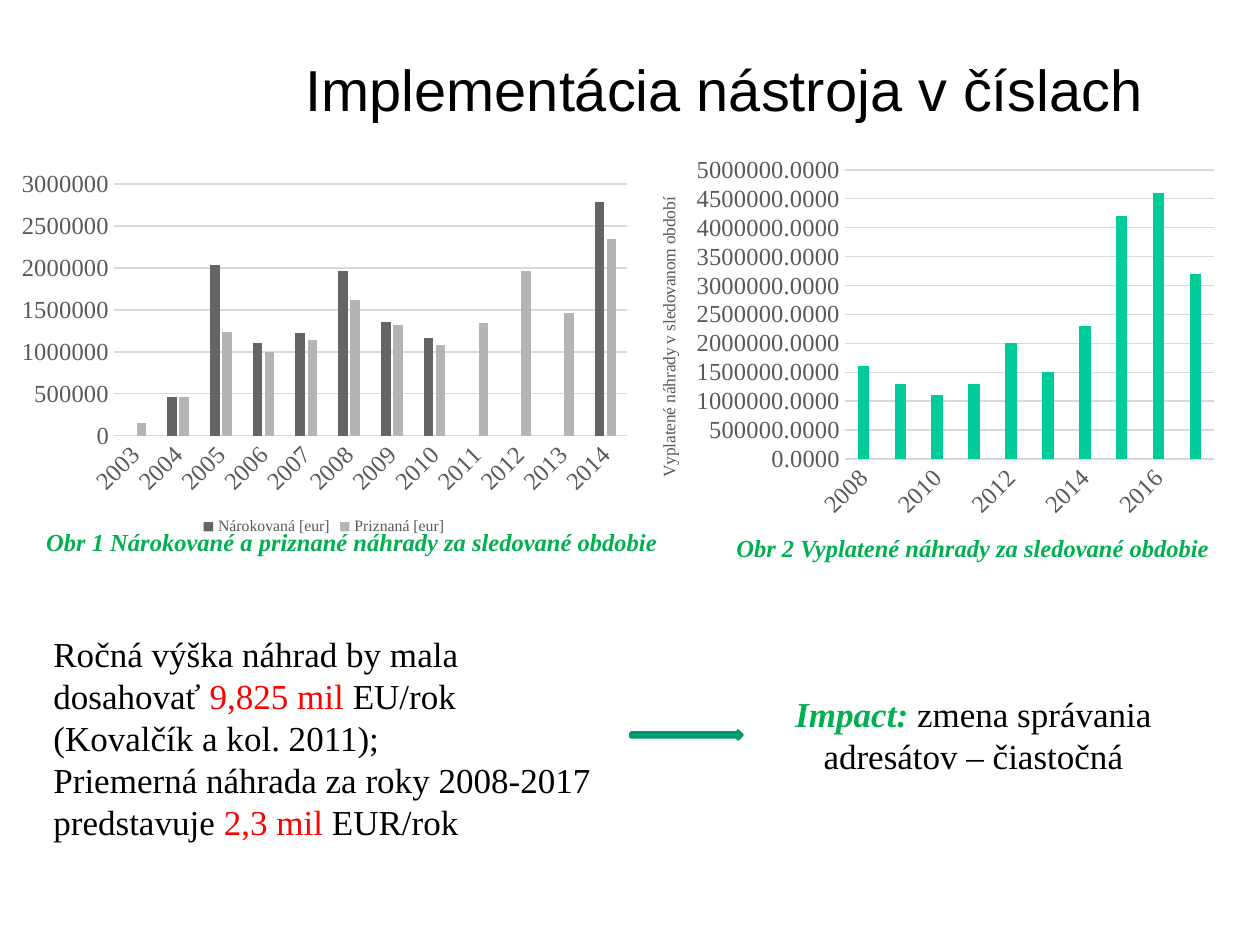
from lxml import etree
from pptx import Presentation
from pptx import util as u
from pptx.chart.data import CategoryChartData
from pptx.dml.color import RGBColor
from pptx.enum import chart as ch, shapes, text
from pptx.oxml.ns import qn

SERIF = "Times New Roman"
BLACK, GREY, GRID, GREEN, RED = "000000", "595959", "D9D9D9", "00B050", "FF0000"
ACCENT = dict(color=GREEN, bold=True, italic=True)
CENTER = text.PP_ALIGN.CENTER

# Each text is a list of paragraphs; each paragraph is a list of (words, format).
TITLE = [[("Implementácia nástroja v číslach", {})]]
CAPTIONS = [
    ((18, 521, 668, 43), "Obr 1 Nárokované a priznané náhrady za sledované obdobie"),
    ((639, 527, 668, 43), "Obr 2 Vyplatené náhrady za sledované obdobie"),
]
COMPENSATION = [
    [("Ročná výška náhrad by mala dosahovať ", {}), ("9,825 mil ", dict(color=RED)),
     ("EU/rok (Kovalčík a kol. 2011);", {})],
    [("Priemerná náhrada za roky 2008-2017 predstavuje ", {}),
     ("2,3 mil ", dict(color=RED)), ("EUR/rok", {})],
]
IMPACT = [[("Impact: ", ACCENT), ("zmena správania adresátov – čiastočná", {})]]

# Boxes and plot areas are left, top, width, height in px on the slide.
CHARTS = [
    dict(box=(630, 149, 596, 378), plot=(845, 170, 369, 289), years=range(2008, 2018),
         top=5000000, fmt="0.0000", title="Vyplatené náhrady v sledovanom období",
         series=[("Series 1", "00CC99",
                  [1600000, 1300000, 1100000, 1300000, 2000000,
                   1500000, 2300000, 4200000, 4600000, 3200000])]),
    dict(box=(9, 163, 630, 378), plot=(114, 184, 513, 252), years=range(2003, 2015),
         top=3000000, fmt="General", title=None,
         series=[("Nárokovaná [eur]", "646464",
                  [None, 460000, 2040000, 1110000, 1220000, 1960000,
                   1360000, 1170000, None, None, None, 2780000]),
                 ("Priznaná [eur]", "B4B4B4",
                  [150000, 460000, 1240000, 1000000, 1140000, 1620000,
                   1320000, 1080000, 1340000, 1960000, 1460000, 2340000])]),
]


def px(n):
    return u.Emu(round(n * 914400 / 126))


def rgb(color):
    return RGBColor.from_string(color)


def set_font(font, size, color=BLACK, name=SERIF, bold=False, italic=False):
    font.size, font.name, font.bold, font.italic = u.Pt(size), name, bold, italic
    font.color.rgb = rgb(color)


def add_text(s, box, paragraphs, size=20, align=text.PP_ALIGN.LEFT, **base):
    tf = s.shapes.add_textbox(*map(px, box)).text_frame
    tf.word_wrap = True
    for i, runs in enumerate(paragraphs):
        p = tf.add_paragraph() if i else tf.paragraphs[0]
        p.alignment = align
        for words, fmt in runs:
            r = p.add_run()
            r.text = words
            set_font(r.font, size, **{**base, **fmt})


def place_plot(chart, box, plot):
    """Fix the inner plot area as fractions of the chart box."""
    area = chart._chartSpace.chart.plotArea
    for old in area.findall(qn("c:layout")):
        area.remove(old)
    layout = etree.Element(qn("c:layout"))
    area.insert(0, layout)
    manual = etree.SubElement(layout, qn("c:manualLayout"))
    (x, y, w, h), (plot_x, plot_y, plot_w, plot_h) = box, plot
    values = dict(layoutTarget="inner", xMode="edge", yMode="edge",
                  x=(plot_x - x) / w, y=(plot_y - y) / h,
                  w=plot_w / w, h=plot_h / h)
    for tag, value in values.items():
        etree.SubElement(manual, qn("c:" + tag)).set("val", str(value))


def add_column_chart(s, box, plot, years, top, fmt, title, series):
    data = CategoryChartData()
    data.categories = [str(year) for year in years]
    for name, _, values in series:
        data.add_series(name, values)
    chart = s.shapes.add_chart(ch.XL_CHART_TYPE.COLUMN_CLUSTERED,
                               *map(px, box), data).chart
    set_font(chart.font, 10)
    chart.has_title = False
    place_plot(chart, box, plot)

    bars = chart.plots[0]
    bars.gap_width, bars.overlap, bars.vary_by_categories = 219, -27, False
    for ser, (_, color, _) in zip(bars.series, series):
        ser.format.fill.solid()
        ser.format.fill.fore_color.rgb = rgb(color)

    cat, val = chart.category_axis, chart.value_axis
    for axis in (cat, val):
        axis.major_tick_mark = axis.minor_tick_mark = ch.XL_TICK_MARK.NONE
        set_font(axis.tick_labels.font, 14, GREY)
    cat._element.txPr.find(qn("a:bodyPr")).set("rot", "-2700000")
    val.minimum_scale, val.maximum_scale, val.major_unit = 0, top, 500000
    val.tick_labels.number_format = fmt
    val.tick_labels.number_format_is_linked = False
    val.format.line.fill.background()
    for line in (cat.format.line, val.major_gridlines.format.line):
        line.color.rgb = rgb(GRID)
        line.width = u.Pt(0.75)

    if title:
        tf = val.axis_title.text_frame
        tf._txBody.find(qn("a:bodyPr")).set("rot", "-5400000")
        r = tf.paragraphs[0].add_run()
        r.text = title
        set_font(r.font, 10, GREY)
    chart.has_legend = len(series) > 1
    if chart.has_legend:
        chart.legend.position = ch.XL_LEGEND_POSITION.BOTTOM
        chart.legend.include_in_layout = False
        set_font(chart.legend.font, 9, GREY)


def add_arrow(s, box):
    sp = s.shapes.add_shape(shapes.MSO_SHAPE.RIGHT_ARROW, *map(px, box))
    sp.shadow.inherit = False
    sp.fill.solid()
    sp.fill.fore_color.rgb = rgb("00CC99")
    sp.line.color.rgb = rgb("009771")
    sp.line.width = u.Pt(2)


def main():
    prs = Presentation()
    prs.slide_width, prs.slide_height = px(1260), px(945)
    s = prs.slides.add_slide(prs.slide_layouts[6])
    add_text(s, (189, 48, 1071, 203), TITLE, size=33, align=CENTER, name="Arial")
    for chart_data in CHARTS:
        add_column_chart(s, **chart_data)
    add_text(s, (753, 686, 441, 97), IMPACT, align=CENTER)
    add_text(s, (41, 626, 566, 224), COMPENSATION)
    add_arrow(s, (631, 731, 111, 8))
    for box, words in CAPTIONS:
        add_text(s, box, [[(words, ACCENT)]], size=14, align=CENTER)
    prs.save("out.pptx")


if __name__ == "__main__":
    main()
